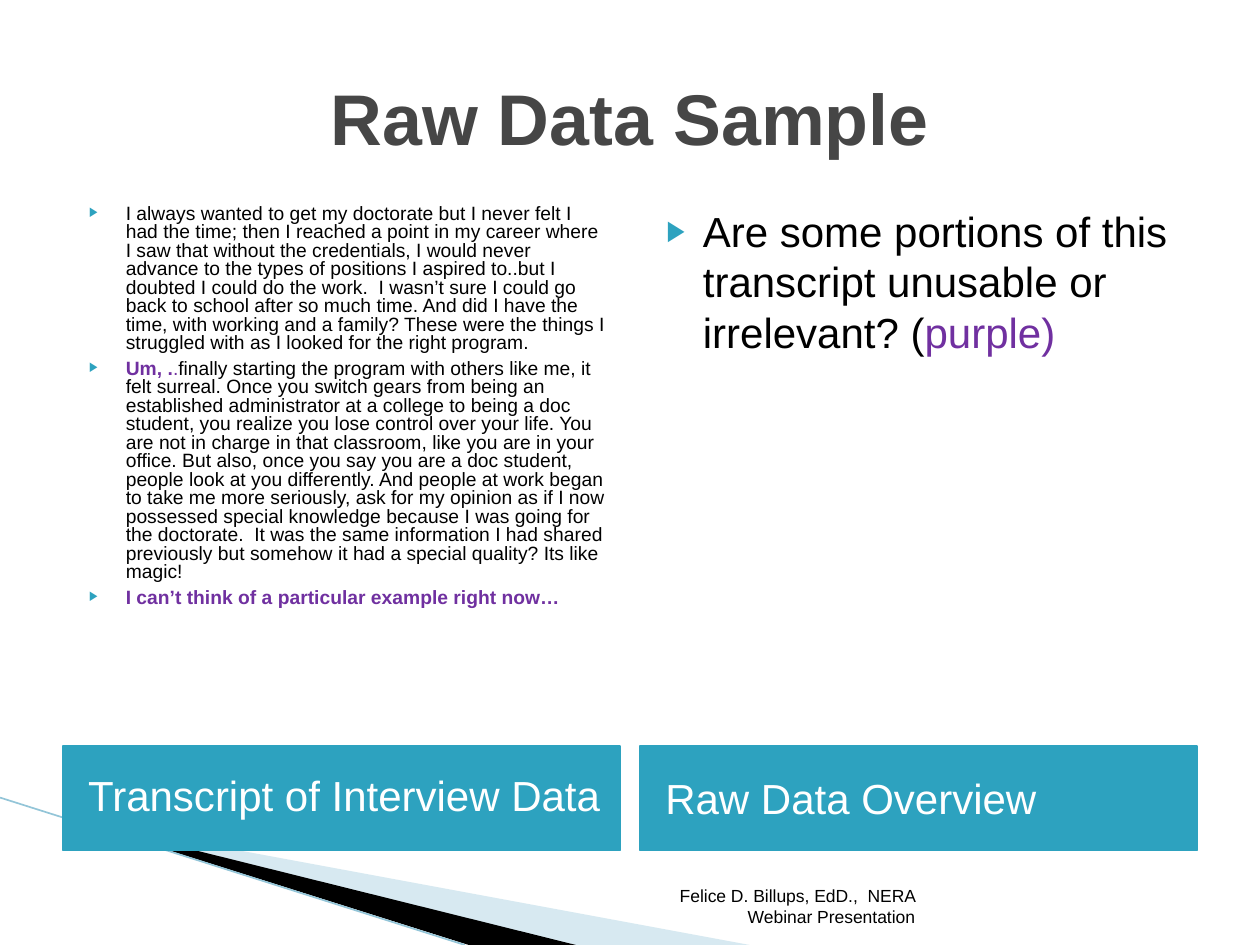
from lxml import etree
from pptx import Presentation
from pptx.dml.color import RGBColor
from pptx.enum.shapes import MSO_CONNECTOR, MSO_SHAPE
from pptx.enum.text import MSO_ANCHOR, PP_ALIGN
from pptx.oxml import parse_xml
from pptx.oxml.ns import nsdecls, qn
from pptx.util import Inches, Pt

STRAIGHT = MSO_CONNECTOR.STRAIGHT
RECTANGLE = MSO_SHAPE.RECTANGLE
TOP, MIDDLE, BOTTOM = MSO_ANCHOR.TOP, MSO_ANCHOR.MIDDLE, MSO_ANCHOR.BOTTOM
LEFT, CENTER, RIGHT = PP_ALIGN.LEFT, PP_ALIGN.CENTER, PP_ALIGN.RIGHT

TEAL = RGBColor(0x2D, 0xA2, 0xBF)
PALE_BLUE = RGBColor(0x9C, 0xCA, 0xDC)
LINE_BLUE = RGBColor(0x93, 0xC5, 0xD8)
GRAY = RGBColor(0x46, 0x46, 0x46)
PURPLE = RGBColor(0x70, 0x30, 0xA0)
BLACK = RGBColor(0, 0, 0)
WHITE = RGBColor(0xFF, 0xFF, 0xFF)

MARGIN, COLUMN_WIDTH, COLUMN_GAP = 0.5, 4.42, 0.16
BODY_TOP, BODY_HEIGHT = 1.58, 4.31
BANNER_TOP, BANNER_HEIGHT = 5.92, 0.83

# Each paragraph is a list of (text, font overrides).
MARKED = {"color": PURPLE}
MARKED_BOLD = {"color": PURPLE, "bold": True}
TRANSCRIPT = [
    [("I always wanted to get my doctorate but I never felt I had the time; then I "
      "reached a point in my career where I saw that without the credentials, I would "
      "never advance to the types of positions I aspired to..but I doubted I could do "
      "the work.  I wasn’t sure I could go back to school after so much time. And did "
      "I have the time, with working and a family? These were the things I struggled "
      "with as I looked for the right program.", {})],
    [("Um, .", MARKED_BOLD),
     (".", MARKED),
     ("finally starting the program with others like me, it felt surreal. Once you "
      "switch gears from being an established administrator at a college to being a "
      "doc student, you realize you lose control over your life. You are not in charge "
      "in that classroom, like you are in your office. But also, once you say you are "
      "a doc student, people look at you differently. And people at work began to take "
      "me more seriously, ask for my opinion as if I now possessed special knowledge "
      "because I was going for the doctorate.  It was the same information I had "
      "shared previously but somehow it had a special quality? Its like magic!", {})],
    [("I can’t think of a particular example right now…", MARKED_BOLD)],
]
OVERVIEW = [[("Are some portions of this transcript unusable or irrelevant? (", {}),
             ("purple)", MARKED)]]
COLUMNS = [
    {"heading": "Transcript of Interview Data", "heading_spacing": 0.9,
     "body": TRANSCRIPT, "size": 11, "spacing": 0.8},
    {"heading": "Raw Data Overview", "heading_spacing": 1.0,
     "body": OVERVIEW, "size": 24, "spacing": 1.0},
]


def set_frame(frame, anchor, left_inset=0.1):
    settings = {"word_wrap": True, "vertical_anchor": anchor,
                "margin_left": Inches(left_inset), "margin_right": Inches(0.1),
                "margin_top": Inches(0.05), "margin_bottom": Inches(0.05)}
    for name, value in settings.items():
        setattr(frame, name, value)


def add_run(paragraph, text, size, color=BLACK, bold=False):
    run = paragraph.add_run()
    run.text = text
    for name, value in {"name": "Arial", "size": Pt(size), "bold": bold}.items():
        setattr(run.font, name, value)
    run.font.color.rgb = color


def add_bullet(paragraph):
    properties = paragraph._p.get_or_add_pPr()
    properties.set("marL", str(Inches(0.4)))
    properties.set("indent", str(Inches(-0.29)))
    for xml in (f'<a:buClr {nsdecls("a")}><a:srgbClr val="{TEAL}"/></a:buClr>',
                f'<a:buSzPct {nsdecls("a")} val="68000"/>',
                f'<a:buFont {nsdecls("a")} typeface="Arial"/>',
                f'<a:buChar {nsdecls("a")} char="▶"/>'):
        properties.append(parse_xml(xml))


def add_label(slide, box, text, anchor, align, **font):
    label = slide.shapes.add_textbox(*map(Inches, box))
    set_frame(label.text_frame, anchor)
    paragraph = label.text_frame.paragraphs[0]
    paragraph.alignment = align
    add_run(paragraph, text, **font)


def add_banner(slide, box, text, spacing):
    banner = slide.shapes.add_shape(RECTANGLE, *map(Inches, box))
    banner.shadow.inherit = False
    banner.fill.solid()
    banner.fill.fore_color.rgb = TEAL
    banner.line.color.rgb = TEAL
    banner.line.width = Pt(0.75)
    set_frame(banner.text_frame, MIDDLE, left_inset=0.2)
    paragraph = banner.text_frame.paragraphs[0]
    paragraph.alignment = LEFT
    paragraph.line_spacing = spacing
    add_run(paragraph, text, 24, WHITE)


def add_bullet_list(slide, box, items, size, spacing):
    frame = slide.shapes.add_textbox(*map(Inches, box)).text_frame
    set_frame(frame, TOP)
    for index, item in enumerate(items):
        paragraph = frame.add_paragraph() if index else frame.paragraphs[0]
        add_bullet(paragraph)
        paragraph.line_spacing = spacing
        if index:
            paragraph.space_before = Pt(4)
        for text, font in item:
            add_run(paragraph, text, size, **font)


def add_wedge(slide, points, color, opacity=100):
    corners = [(Inches(x), Inches(y)) for x, y in points]
    builder = slide.shapes.build_freeform(*corners[0])
    builder.add_line_segments(corners[1:], close=True)
    wedge = builder.convert_to_shape()
    wedge.shadow.inherit = False
    wedge.fill.solid()
    wedge.fill.fore_color.rgb = color
    wedge.line.fill.background()
    if opacity < 100:
        rgb = wedge.fill._xPr.find(".//" + qn("a:srgbClr"))
        etree.SubElement(rgb, qn("a:alpha")).set("val", str(opacity * 1000))


def add_corner_decoration(slide, left, top, bottom):
    """Draw the swoosh whose wedges start at (left, top) and run to bottom."""
    add_wedge(slide, [(left, top), (left + 5.4, bottom), (left + 4, bottom)],
              PALE_BLUE, opacity=40)
    add_wedge(slide, [(left, top), (left + 4.02, bottom), (left + 3.17, bottom)], BLACK)
    edge = slide.shapes.add_connector(STRAIGHT, Inches(0), Inches(6.33),
                                      Inches(3.69), Inches(bottom))
    edge.line.color.rgb = LINE_BLUE
    edge.line.width = Pt(0.95)
    etree.SubElement(edge._element.spPr, qn("a:effectLst"))


def add_column(slide, left, column):
    add_banner(slide, (left, BANNER_TOP, COLUMN_WIDTH, BANNER_HEIGHT),
               column["heading"], column["heading_spacing"])
    add_bullet_list(slide, (left, BODY_TOP, COLUMN_WIDTH, BODY_HEIGHT),
                    column["body"], column["size"], column["spacing"])


def main():
    deck = Presentation()
    deck.slide_width, deck.slide_height = Inches(10), Inches(7.5)
    slide = deck.slides.add_slide(deck.slide_layouts[6])
    add_corner_decoration(slide, 0.55, 6.5, 7.5)
    add_label(slide, (MARGIN, 0.3, 9, 1.25), "Raw Data Sample", MIDDLE, CENTER,
              size=41, color=GRAY, bold=True)
    for index, column in enumerate(COLUMNS):
        add_column(slide, MARGIN + index * (COLUMN_WIDTH + COLUMN_GAP), column)
    add_label(slide, (4.79, 7.01, 2.57, 0.4),
              "Felice D. Billups, EdD.,  NERA Webinar Presentation", BOTTOM, RIGHT, size=10)
    deck.save("out.pptx")


if __name__ == "__main__":
    main()
